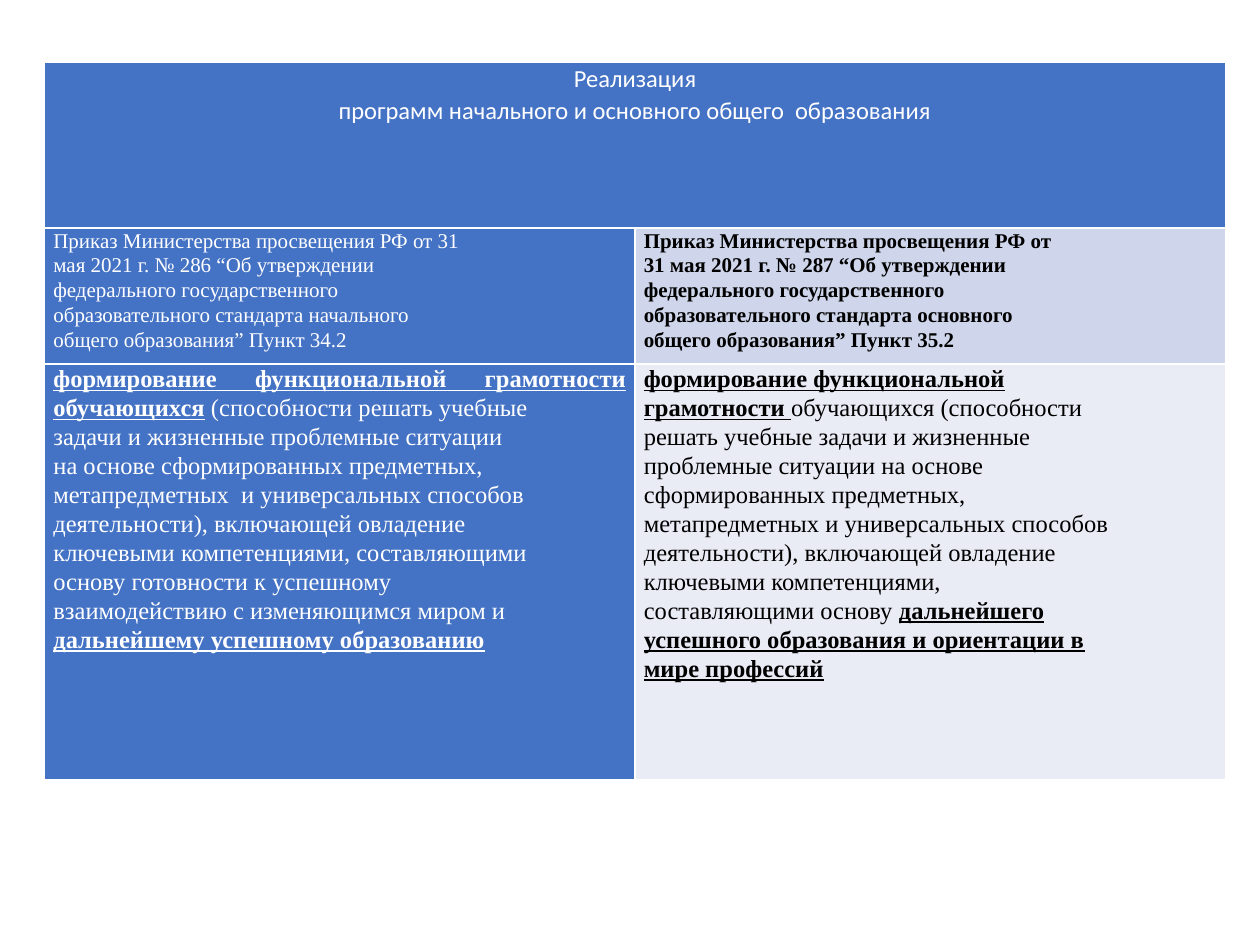
"""Build a slide with a table comparing two education standards."""
from dataclasses import dataclass

from lxml.etree import SubElement
from pptx import Presentation
from pptx.dml.color import RGBColor
from pptx.enum.text import PP_ALIGN
from pptx.oxml.ns import qn
from pptx.util import Pt


@dataclass(frozen=True)
class Theme:
    blue: str = "4472C4"
    band: str = "CFD5EA"
    pale: str = "E9EBF5"
    white: str = "FFFFFF"
    black: str = "000000"
    heading_font: str = "Calibri"
    body_font: str = "Times New Roman"
    large: int = 14
    small: int = 12


theme = Theme()

TITLE = """Реализация
программ начального и основного общего  образования"""

ORDER_PRIMARY = """Приказ Министерства просвещения РФ от 31
мая 2021 г. № 286 “Об утверждении
федерального государственного
образовательного стандарта начального
общего образования” Пункт 34.2"""

ORDER_BASIC = """*Приказ Министерства просвещения РФ от
*31 мая 2021 г. № 287 “Об утверждении
*федерального государственного
*образовательного стандарта основного
*общего образования” Пункт 35.2"""

GOAL_PRIMARY = """*формирование функциональной грамотности обучающихся* (способности решать учебные
задачи и жизненные проблемные ситуации
на основе сформированных предметных,
метапредметных  и универсальных способов
деятельности), включающей овладение
ключевыми компетенциями, составляющими
основу готовности к успешному
взаимодействию с изменяющимся миром и
*дальнейшему успешному образованию"""

GOAL_BASIC = """*формирование функциональной
*грамотности *обучающихся (способности
решать учебные задачи и жизненные
проблемные ситуации на основе
сформированных предметных,
метапредметных и универсальных способов
деятельности), включающей овладение
ключевыми компетенциями,
составляющими основу *дальнейшего
*успешного образования и ориентации в
*мире профессий"""


def fill_cell(cell, text, fill, color, font, size, align, underline=False):
    """Fill a cell line by line; asterisks switch emphasis on and off."""
    cell.margin_left = cell.margin_right = Pt(5)
    cell.margin_top = cell.margin_bottom = Pt(0)
    for index, line in enumerate(text.split("\n")):
        frame = cell.text_frame
        paragraph = frame.add_paragraph() if index else frame.paragraphs[0]
        paragraph.alignment = align
        paragraph.line_spacing = 1.07
        paragraph.font.name = font
        paragraph.font.size = Pt(size)
        paragraph.font.color.rgb = RGBColor.from_string(color)
        for position, part in enumerate(line.split("*")):
            if part:
                run = paragraph.add_run()
                run.text = part
                run.font.bold = position % 2 == 1
                run.font.underline = underline and position % 2 == 1
    for side in ("a:lnL", "a:lnR", "a:lnT", "a:lnB"):
        border = SubElement(cell._tc.get_or_add_tcPr(), qn(side), w=str(Pt(1)))
        solid = SubElement(border, qn("a:solidFill"))
        SubElement(solid, qn("a:srgbClr"), val=theme.white)
    cell.fill.solid()
    cell.fill.fore_color.rgb = RGBColor.from_string(fill)


presentation = Presentation()
presentation.slide_width, presentation.slide_height = Pt(720), Pt(540)
slide = presentation.slides.add_slide(presentation.slide_layouts[6])

row_heights = (94.7, 77.8, 237.9)
column_width = 337.4
table = slide.shapes.add_table(
    3, 2, Pt(25.5), Pt(35.5), Pt(2 * column_width), Pt(sum(row_heights))
).table
table.first_row = table.horz_banding = False
for row, height in zip(table.rows, row_heights):
    row.height = Pt(height)
for column in table.columns:
    column.width = Pt(column_width)

table.cell(0, 0).merge(table.cell(0, 1))
fill_cell(table.cell(0, 0), TITLE, theme.blue, theme.white,
          theme.heading_font, theme.large, PP_ALIGN.CENTER)

body_rows = (
    (ORDER_PRIMARY, ORDER_BASIC, theme.band, theme.small, PP_ALIGN.LEFT, False),
    (GOAL_PRIMARY, GOAL_BASIC, theme.pale, theme.large, PP_ALIGN.JUSTIFY, True),
)
for row_index, (primary, basic, tint, size, align, underline) in enumerate(body_rows, 1):
    fill_cell(table.cell(row_index, 0), primary, theme.blue, theme.white,
              theme.body_font, size, align, underline)
    fill_cell(table.cell(row_index, 1), basic, tint, theme.black,
              theme.body_font, size, align, underline)

presentation.save("out.pptx")
